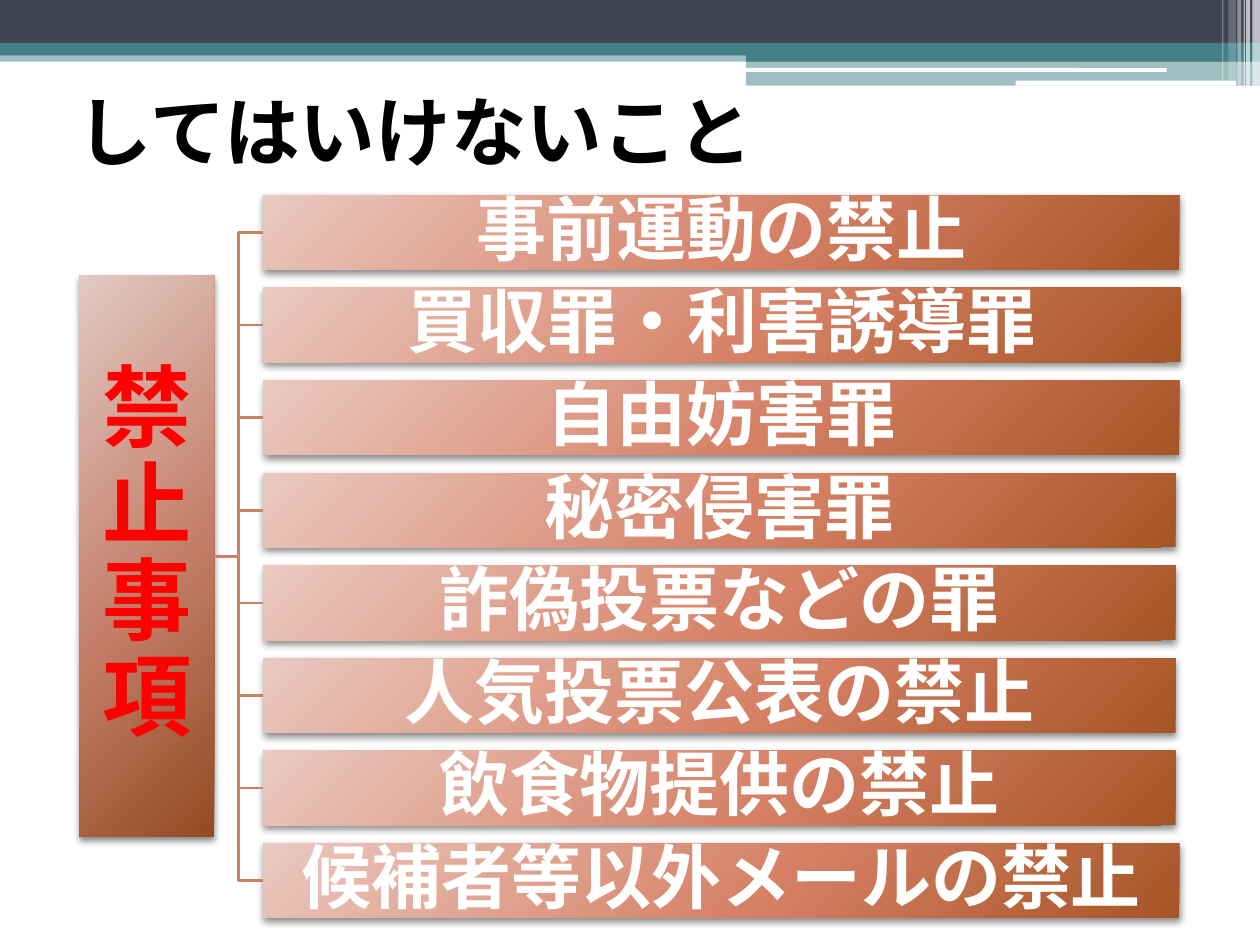
from lxml import etree
from pptx import Presentation
from pptx import util as u
from pptx.dml.color import RGBColor
from pptx.enum import shapes, text
from pptx.oxml import ns, parse_xml

FONT = "Noto Sans CJK JP"
WHITE = RGBColor(0xFF, 0xFF, 0xFF)
BLACK = RGBColor(0, 0, 0)
RED = RGBColor(0xFF, 0, 0)
NAVY = RGBColor(0x42, 0x44, 0x56)
TEAL = RGBColor(0x43, 0x80, 0x86)
COPPER = RGBColor(0xCB, 0x81, 0x64)
BAR_STOPS = (
    (0, RGBColor(0xEA, 0xC9, 0xC0)),
    (55, RGBColor(0xD6, 0x81, 0x66)),
    (100, RGBColor(0xA6, 0x55, 0x26)),
)
PANEL_STOPS = (
    (0, RGBColor(0xE2, 0xC9, 0xC2)),
    (55, RGBColor(0xC3, 0x7E, 0x69)),
    (100, RGBColor(0x92, 0x4B, 0x22)),
)
A = ns.nsdecls("a")

BANDS = (
    (0, 0.4, 10, 0.09, TEAL, 50),
    (0, 0, 10, 0.34, NAVY, 100),
    (0, 0.34, 10, 0.1, TEAL, 100),
    (5.92, 0.39, 4.08, 0.1, TEAL, 100),
    (5.92, 0.48, 4.08, 0.2, TEAL, 50),
)
RULES = ((5.91, 0.54, 3.35, 0.03), (8.06, 0.64, 1.75, 0.04))
STRIPES = (
    (9.94, 0.06, 0.68, 65),
    (9.89, 0.03, 0.68, 65),
    (9.87, 0.01, 0.68, 60),
    (9.82, 0.03, 0.68, 40),
    (9.75, 0.06, 0.64, 20),
    (9.7, 0.01, 0.64, 30),
)
PROHIBITIONS = (
    ("事前運動の禁止", 7.27),
    ("買収罪・利害誘導罪", 7.28),
    ("自由妨害罪", 7.27),
    ("秘密侵害罪", 7.24),
    ("詐偽投票などの罪", 7.24),
    ("人気投票公表の禁止", 7.24),
    ("飲食物提供の禁止", 7.24),
    ("候補者等以外メールの禁止", 7.27),
)
BAR_LEFT, BAR_TOP, BAR_HEIGHT, BAR_PITCH = 2.09, 1.55, 0.59, 0.735


class SlideBuilder:
    def __init__(self, page):
        self.page = page

    def style(self, para, size, color):
        font = para.font
        font.name, font.size, font.bold = FONT, u.Pt(size), True
        font.color.rgb = color
        latin = font._element.find(ns.qn("a:latin"))
        latin.addnext(parse_xml(f'<a:ea {A} typeface="{FONT}"/>'))

    def title(self, wording, left, top, width, height):
        box = self.page.shapes.title
        box.left, box.top = u.Inches(left), u.Inches(top)
        box.width, box.height = u.Inches(width), u.Inches(height)
        frame = box.text_frame
        frame.text = wording
        frame.vertical_anchor = text.MSO_ANCHOR.MIDDLE
        para = frame.paragraphs[0]
        para.alignment = text.PP_ALIGN.LEFT
        self.style(para, 43.2, BLACK)

    def block(self, left, top, width, height, color, opacity=100, rounded=False):
        kind = shapes.MSO_SHAPE.ROUNDED_RECTANGLE if rounded else shapes.MSO_SHAPE.RECTANGLE
        box = self.page.shapes.add_shape(
            kind, u.Inches(left), u.Inches(top), u.Inches(width), u.Inches(height)
        )
        box.shadow.inherit = False
        box.line.fill.background()
        box.fill.solid()
        box.fill.fore_color.rgb = color
        if opacity < 100:
            tint = box._element.spPr.find(".//" + ns.qn("a:srgbClr"))
            etree.SubElement(tint, ns.qn("a:alpha"), val=str(opacity * 1000))
        return box

    def card(self, wording, left, top, width, height, stops, size, color, inset):
        box = self.block(left, top, width, height, stops[0][1])
        properties = box._element.spPr
        marks = "".join(
            f'<a:gs pos="{place * 1000}"><a:srgbClr val="{shade}"/></a:gs>'
            for place, shade in stops
        )
        gradient = parse_xml(
            f'<a:gradFill {A} rotWithShape="1"><a:gsLst>{marks}</a:gsLst>'
            '<a:path path="circle"><a:fillToRect l="-40000" t="-90000" '
            'r="140000" b="190000"/></a:path></a:gradFill>'
        )
        properties.replace(properties.find(ns.qn("a:solidFill")), gradient)
        properties.find(ns.qn("a:effectLst")).append(parse_xml(
            f'<a:outerShdw {A} blurRad="50800" dist="25400" dir="5400000" rotWithShape="0">'
            '<a:srgbClr val="000000"><a:alpha val="45000"/></a:srgbClr></a:outerShdw>'
        ))
        frame = box.text_frame
        frame.word_wrap = True
        frame.vertical_anchor = text.MSO_ANCHOR.MIDDLE
        frame.margin_left = frame.margin_right = u.Inches(inset)
        frame.margin_top = frame.margin_bottom = u.Inches(inset)
        frame.text = wording
        para = frame.paragraphs[0]
        para.alignment = text.PP_ALIGN.CENTER
        para.line_spacing = 0.9
        self.style(para, size, color)
        return box

    def branch(self, parent, child):
        line = self.page.shapes.add_connector(shapes.MSO_CONNECTOR.ELBOW, 0, 0, 0, 0)
        line.begin_connect(parent, 3)
        line.end_connect(child, 1)
        line.line.color.rgb = COPPER
        line.line.width = u.Pt(1.5)
        etree.SubElement(line._element.spPr, ns.qn("a:effectLst"))


def main():
    deck = Presentation()
    deck.slide_width, deck.slide_height = u.Inches(10), u.Inches(7.5)
    builder = SlideBuilder(deck.slides.add_slide(deck.slide_layouts[5]))

    for band in BANDS:
        builder.block(*band)
    for rule in RULES:
        builder.block(*rule, WHITE, rounded=True)
    for left, width, height, opacity in STRIPES:
        builder.block(left, 0, width, height, WHITE, opacity)

    builder.title("してはいけないこと", 0.51, 0.6, 9, 0.87)
    panel = builder.card("禁止事項", 0.63, 2.19, 1.07, 4.45, PANEL_STOPS, 51, RED, 0.04)
    for row, (wording, width) in enumerate(PROHIBITIONS):
        top = BAR_TOP + row * BAR_PITCH
        bar = builder.card(
            wording, BAR_LEFT, top, width, BAR_HEIGHT, BAR_STOPS, 40, WHITE, 0.03
        )
        builder.branch(panel, bar)

    deck.save("out.pptx")


if __name__ == "__main__":
    main()
